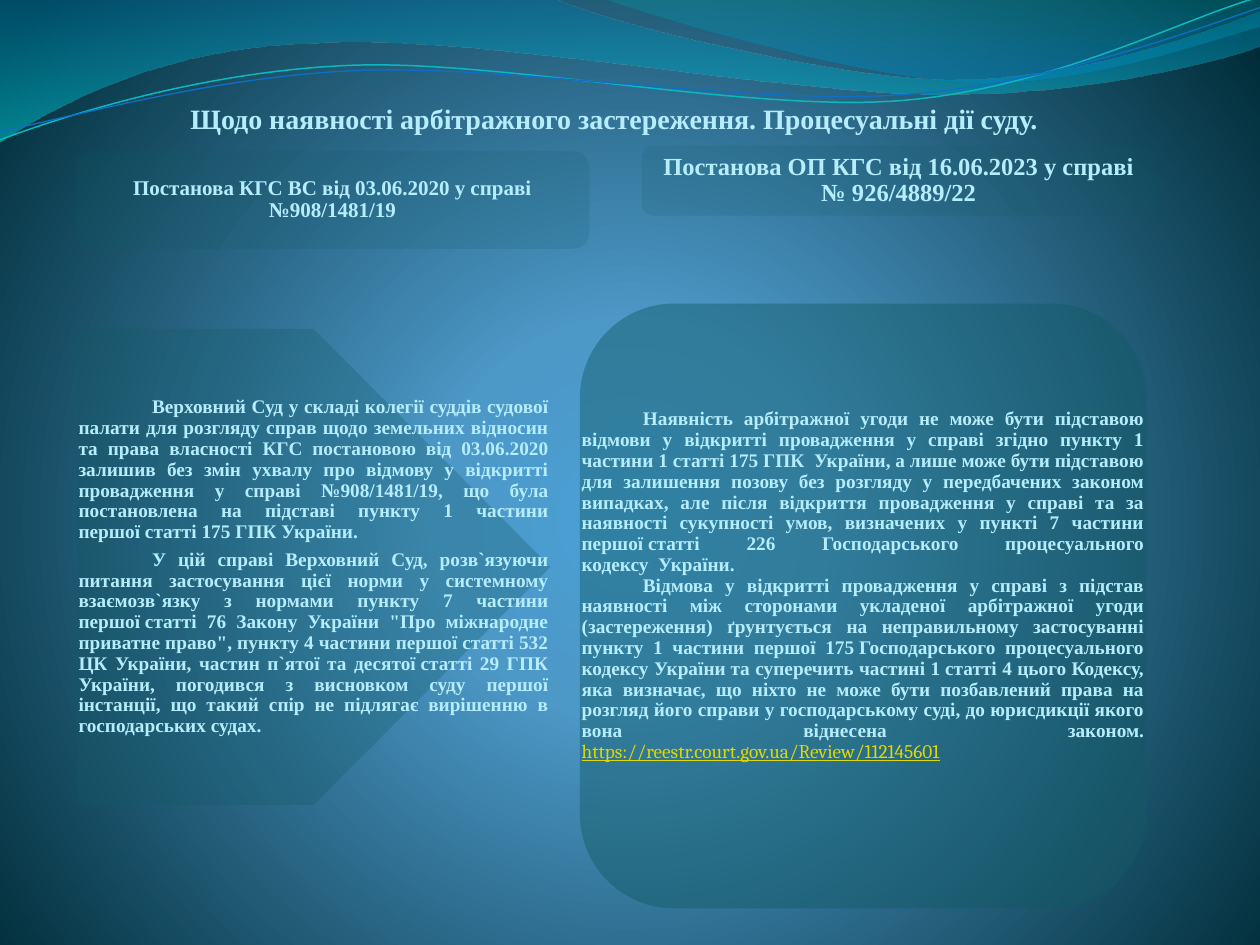
from dataclasses import dataclass

from lxml import etree
from pptx import Presentation
from pptx.dml.color import RGBColor
from pptx.enum import shapes, text
from pptx.oxml import ns
from pptx.util import Pt


@dataclass(frozen=True)
class Theme:
    ink: str = "B5EDFD"
    link: str = "E2D700"
    panel: str = "115964"
    teal_line: str = "0AB8BF"
    blue_line: str = "0F6FC6"
    serif: str = "Times New Roman"
    link_font: str = "Cambria"
    title: float = 16
    later_heading: float = 14
    earlier_heading: float = 12
    body: float = 11
    backdrop: tuple = ((0, "4AA0D6", 100), (25, "4C98C7", 100), (100, "002C38", 100))
    left_wave: tuple = ((0, "0074A1", 45), (100, "00C6CF", 55))
    right_wave: tuple = ((0, "00A1A9", 30), (80, "008BBF", 45))


THEME = Theme()
SHAPE = shapes.MSO_SHAPE
ALIGN = text.PP_ALIGN
NO_BREAK_SPACE = chr(160)

# A tilde in the wording stands for a no-break space.
TITLE = "Щодо наявності арбітражного застереження. Процесуальні дії суду."
EARLIER_HEADING = "Постанова КГС ВС від 03.06.2020 у справі №908/1481/19"
LATER_HEADING = "Постанова ОП КГС від 16.06.2023 у справі № 926/4889/22"
EARLIER_RULING = [
    ["Верховний Суд у складі колегії суддів судової палати для розгляду справ щодо "
     "земельних відносин та права власності КГС постановою від 03.06.2020 залишив без змін "
     "ухвалу про відмову у відкритті провадження у справі №908/1481/19, що була "
     "постановлена на підставі пункту 1 частини першої~статті 175 ГПК України."],
    ["У цій справі Верховний Суд, розв`язуючи питання застосування цієї норми у системному "
     "взаємозв`язку з нормами пункту 7 частини першої~статті 76 Закону України \"Про "
     "міжнародне приватне право\", пункту 4 частини першої~статті 532 ЦК України, частин "
     "п`ятої та десятої~статті 29 ГПК України, погодився з висновком суду першої інстанції, "
     "що такий спір не підлягає вирішенню в господарських судах."],
]
LATER_RULING = [
    ["Наявність арбітражної угоди не може бути підставою відмови у відкритті провадження у "
     "справі згідно пункту 1 частини 1~статті 175 ГПК~~України, а лише може бути підставою "
     "для залишення позову без розгляду у передбачених законом випадках, але після відкриття "
     "провадження у справі та за наявності сукупності умов, визначених у пункті 7 частини "
     "першої~статті 226 Господарського процесуального кодексу~~України."],
    ["Відмова у відкритті провадження у справі з підстав наявності між сторонами укладеної "
     "арбітражної угоди (застереження) ґрунтується на неправильному застосуванні пункту 1 "
     "частини першої 175~Господарського процесуального кодексу України~та суперечить частині "
     "1~статті 4 цього Кодексу, яка визначає, що ніхто не може бути позбавлений права на "
     "розгляд його справи у господарському суді, до юрисдикції якого вона віднесена законом. ",
     "https://reestr.court.gov.ua/Review/112145601"],
]


def rgb(value):
    return RGBColor.from_string(value)


def set_opacity(color, percent):
    etree.SubElement(color, ns.qn("a:alpha"), val=str(percent * 1000))


def set_gradient(parent, stops, radial=False):
    """Replace the solid fill of parent with a gradient of (position, colour, opacity)."""
    gradient = etree.Element(ns.qn("a:gradFill"), rotWithShape="1")
    stop_list = etree.SubElement(gradient, ns.qn("a:gsLst"))
    for position, value, opacity in stops:
        stop = etree.SubElement(stop_list, ns.qn("a:gs"), pos=str(position * 1000))
        color = etree.SubElement(stop, ns.qn("a:srgbClr"), val=value)
        if opacity < 100:
            set_opacity(color, opacity)
    if radial:
        circle = etree.SubElement(gradient, ns.qn("a:path"))
        circle.set("path", "circle")
        etree.SubElement(circle, ns.qn("a:fillToRect"),
                         l="10000", t="110000", r="10000", b="100000")
    else:
        etree.SubElement(gradient, ns.qn("a:lin"), ang="5400000", scaled="1")
    parent.replace(parent.find(ns.qn("a:solidFill")), gradient)


def add_outline(slide, start, segments, close):
    """Draw segments: a pair is a straight line, six numbers a Bézier curve."""
    builder = slide.shapes.build_freeform(*map(Pt, start))
    builder.add_line_segments([tuple(map(Pt, part[-2:])) for part in segments], close=close)
    outline = builder.convert_to_shape()
    outline.shadow.inherit = False
    sides = outline.element.findall(".//" + ns.qn("a:lnTo"))
    for side, part in zip(sides, segments):
        if len(part) == 6:
            curve = etree.Element(ns.qn("a:cubicBezTo"))
            for x, y in zip(part[::2], part[1::2]):
                etree.SubElement(curve, ns.qn("a:pt"), x=str(Pt(x) - outline.left),
                                 y=str(Pt(y) - outline.top))
            side.getparent().replace(side, curve)
    return outline


def add_wave(slide, stops, start, segments):
    wave = add_outline(slide, start, segments, close=True)
    wave.line.fill.background()
    wave.fill.solid()
    set_gradient(wave.element.spPr, stops)


def add_ripple(slide, color, width, start, segments):
    ripple = add_outline(slide, start, segments, close=False)
    ripple.fill.background()
    ripple.line.color.rgb = rgb(color)
    ripple.line.width = Pt(width)


def add_backdrop(slide):
    slide.background.fill.solid()
    set_gradient(slide.element.find(".//" + ns.qn("p:bgPr")), THEME.backdrop, radial=True)
    add_wave(slide, THEME.left_wave, (0, 0), [
        (316.8, -0.7), (342.7, 12.2, 478.1, 45.4, 545.8, 45.4),
        (614.2, 45.4, 689.8, 18.7, 720, 6.5), (720.7, 25.9),
        (707.8, 31.7, 626.4, 54.7, 537.1, 54), (447.8, 54, 275, 20.2, 185, 24.5),
        (92.9, 25.9, 33.1, 59.8, -0.7, 81.4)])
    add_wave(slide, THEME.right_wave, (344.9, -0.7), [
        (366.5, 7.9, 491, 44.6, 553.7, 46.8), (616.3, 49.7, 691.9, 23, 720, 15.1), (720, 0)])
    add_ripple(slide, THEME.teal_line, 0.85, (0, 79.9), [
        (34.6, 67, 113.8, 41, 199.4, 37.4), (284.4, 33.8, 427, 64.1, 513.4, 57.6),
        (599.8, 51.1, 675.4, 10.8, 718.6, -1.4)])
    add_ripple(slide, THEME.blue_line, 0.75, (0, 74.9), [
        (33.8, 69.1, 118.1, 43.9, 203.8, 40.3), (290.2, 36.7, 429.8, 60.5, 516.2, 54),
        (601.9, 48.2, 687.6, 15.1, 720, 4.3)])


def add_text(slide, box, paragraphs, size, align=ALIGN.CENTER, inset=1, bottom=None,
             indent=0, after=0, spacing=0.9):
    """Each paragraph is its wording, followed by a web address if it has one."""
    frame = slide.shapes.add_textbox(*map(Pt, box)).text_frame
    frame.word_wrap = True
    frame.vertical_anchor = text.MSO_ANCHOR.MIDDLE
    frame.margin_left = frame.margin_right = frame.margin_top = Pt(inset)
    frame.margin_bottom = Pt(inset if bottom is None else bottom)
    for index, (wording, *addresses) in enumerate(paragraphs):
        paragraph = frame.paragraphs[0] if index == 0 else frame.add_paragraph()
        paragraph.alignment = align
        paragraph.line_spacing = spacing
        paragraph.space_after = Pt(after)
        if indent:
            paragraph._p.get_or_add_pPr().set("indent", str(Pt(indent)))
        font = paragraph.font
        font.name, font.size, font.bold = THEME.serif, Pt(size), True
        font.color.rgb = rgb(THEME.ink)
        paragraph.add_run().text = wording.replace("~", NO_BREAK_SPACE)
        for address in addresses:
            run = paragraph.add_run()
            run.text = address
            run.font.name, run.font.bold, run.font.underline = THEME.link_font, False, True
            run.font.color.rgb = rgb(THEME.link)


def add_panel(slide, box, preset, opacity):
    panel = slide.shapes.add_shape(preset, *map(Pt, box))
    panel.shadow.inherit = False
    panel.line.fill.background()
    panel.fill.solid()
    panel.fill.fore_color.rgb = rgb(THEME.panel)
    set_opacity(panel.element.spPr.find(".//" + ns.qn("a:srgbClr")), opacity)


def add_heading(slide, box, wording, size, opacity, inset):
    add_panel(slide, box, SHAPE.ROUNDED_RECTANGLE, opacity)
    add_text(slide, box, [[wording]], size, inset=inset)


def add_ruling(slide, box, preset, opacity, paragraphs, **layout):
    add_panel(slide, box, preset, opacity)
    add_text(slide, box, paragraphs, THEME.body, ALIGN.JUSTIFY, **layout)


def main():
    deck = Presentation()
    deck.slide_width, deck.slide_height = Pt(720), Pt(540)
    slide = deck.slides.add_slide(deck.slide_layouts[6])
    add_backdrop(slide)
    add_text(slide, (48, 55, 606, 25), [[TITLE]], THEME.title, spacing=1)
    add_ruling(slide, (43.9, 188, 270.7, 272), SHAPE.PENTAGON, 29, EARLIER_RULING,
               indent=42, after=4)
    add_ruling(slide, (331.4, 173.5, 323.6, 345.6), SHAPE.FLOWCHART_ALTERNATE_PROCESS, 44,
               LATER_RULING, indent=35, bottom=24)
    add_heading(slide, (43.2, 86.2, 293.6, 56), EARLIER_HEADING, THEME.earlier_heading,
                17, inset=3.6)
    add_heading(slide, (366.8, 83.2, 293.6, 40), LATER_HEADING, THEME.later_heading,
                16, inset=4.3)
    deck.save("out.pptx")


if __name__ == "__main__":
    main()
